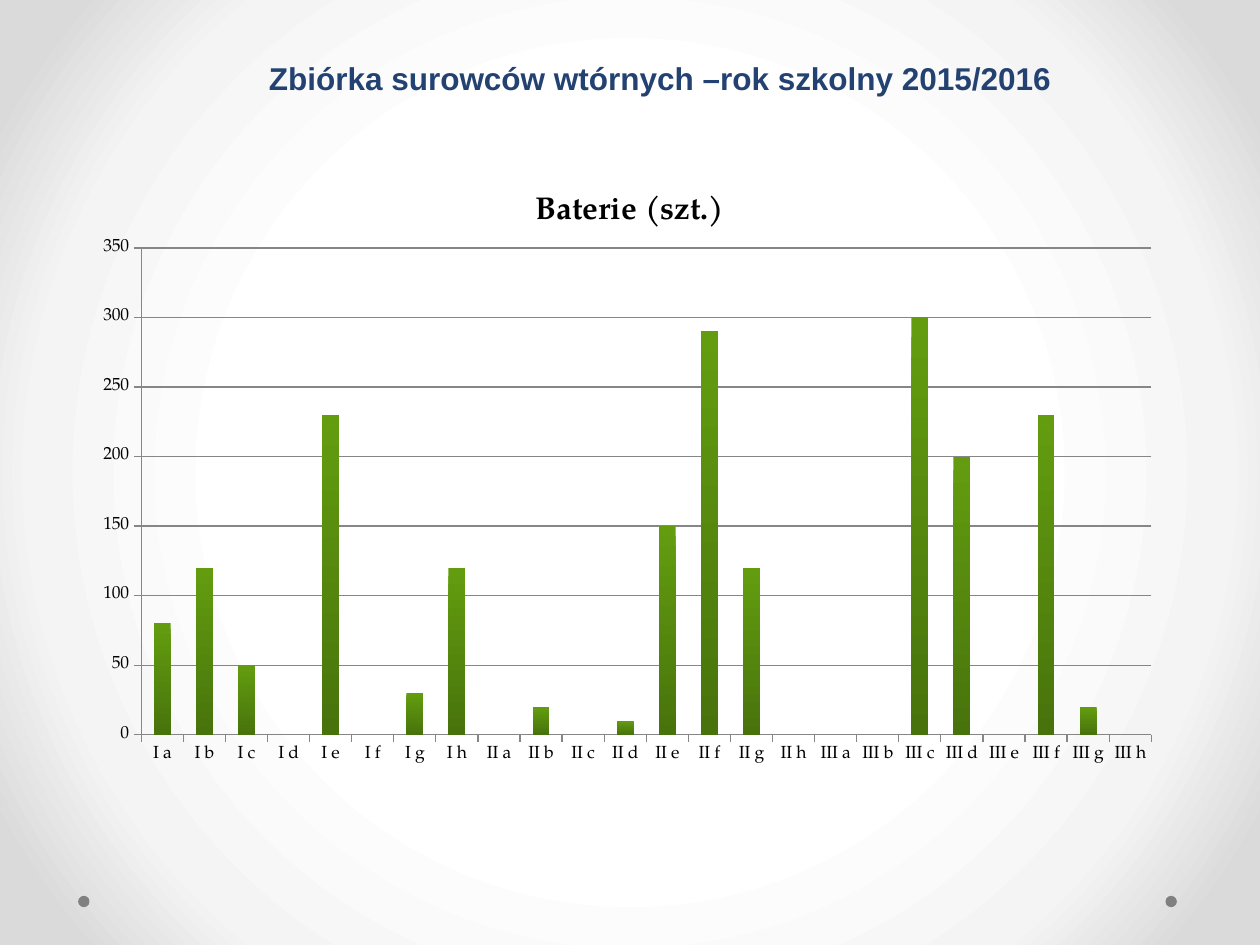
import pptx
import pptx.chart.data
import pptx.dml.color
import pptx.enum.chart
import pptx.enum.shapes
import pptx.enum.text
import pptx.oxml
import pptx.oxml.ns
import pptx.util
from pptx.util import Inches

RGBColor = pptx.dml.color.RGBColor
NAVY = RGBColor(0x23, 0x42, 0x71)
BLACK = RGBColor(0x00, 0x00, 0x00)
DOT_GRAY = RGBColor(0x80, 0x80, 0x80)
LINE_GRAY = RGBColor(0x86, 0x86, 0x86)
BAR_LIGHT = RGBColor(0x63, 0x9D, 0x0F)
BAR_DARK = RGBColor(0x48, 0x73, 0x0C)
BACKGROUND_STOPS = [
    (50, RGBColor(0xFF, 0xFF, 0xFF)),
    (76, RGBColor(0xF4, 0xF4, 0xF4)),
    (92, RGBColor(0xDA, 0xDA, 0xDA)),
]
CHART_FONT = "TeX Gyre Pagella"
SERIES_NAME = "Baterie (szt.)"
GRADES = ["I", "II", "III"]
CLASSES = "abcdefgh"
BATTERIES = [
    80, 120, 50, None, 230, None, 30, 120,
    None, 20, None, 10, 150, 290, 120, None,
    None, None, 300, 200, None, 230, 20, None,
]
PLOT_LAYOUT = {"x": 0.05, "y": 0.13, "w": 0.93, "h": 0.8}


def format_font(font, name, size, color, bold=False):
    """Set the typeface, size, colour and weight of a font."""
    font.name = name
    font.size = pptx.util.Pt(size)
    font.color.rgb = color
    font.bold = bold


def write_text(frame, text, align=None, line_spacing=None, space_after=None, **style):
    """Write one paragraph into a text frame with the given format."""
    para = frame.paragraphs[0]
    para.alignment = align
    para.line_spacing = line_spacing
    if space_after is not None:
        para.space_after = pptx.util.Pt(space_after)
    span = para.add_run()
    span.text = text
    format_font(span.font, **style)


def paint_background(page):
    """Give the page a circular gradient from white to gray."""
    stops = "".join(
        f'<a:gs pos="{position * 1000}"><a:srgbClr val="{color}"/></a:gs>'
        for position, color in BACKGROUND_STOPS
    )
    background = pptx.oxml.parse_xml(
        f'<p:bg {pptx.oxml.ns.nsdecls("p", "a")}><p:bgPr><a:gradFill rotWithShape="1">'
        f'<a:gsLst>{stops}</a:gsLst><a:path path="circle">'
        '<a:fillToRect l="50000" t="50000" r="50000" b="50000"/></a:path>'
        '</a:gradFill><a:effectLst/></p:bgPr></p:bg>'
    )
    page.element.cSld.insert(0, background)


def add_dots(page, left, top, width, height):
    """Place a gray dot at each end of the given strip."""
    for dot_left in (left, left + width - height):
        dot = page.shapes.add_shape(
            pptx.enum.shapes.MSO_SHAPE.OVAL, dot_left, top, height, height
        )
        dot.shadow.inherit = False
        dot.fill.solid()
        dot.fill.fore_color.rgb = DOT_GRAY
        dot.line.fill.background()


def add_heading(page, left, top, width, height):
    """Move the title placeholder to the box and fill it."""
    box = page.shapes.title
    box.left, box.top, box.width, box.height = left, top, width, height
    frame = box.text_frame
    frame.word_wrap = True
    frame.auto_size = pptx.enum.text.MSO_AUTO_SIZE.NONE
    frame.vertical_anchor = pptx.enum.text.MSO_ANCHOR.TOP
    write_text(
        frame, "Zbiórka surowców wtórnych –rok szkolny 2015/2016",
        align=pptx.enum.text.PP_ALIGN.CENTER, line_spacing=1.15, space_after=10,
        name="Arial", size=18, color=NAVY, bold=True,
    )


def fix_plot_area(chart):
    """Pin the inner plot area to fixed fractions of the chart."""
    plot_area = chart.element.chart.plotArea
    for automatic in plot_area.findall(pptx.oxml.ns.qn("c:layout")):
        plot_area.remove(automatic)
    sizes = "".join(f'<c:{key} val="{value}"/>' for key, value in PLOT_LAYOUT.items())
    layout = pptx.oxml.parse_xml(
        f'<c:layout {pptx.oxml.ns.nsdecls("c")}><c:manualLayout>'
        '<c:layoutTarget val="inner"/><c:xMode val="edge"/><c:yMode val="edge"/>'
        f'{sizes}</c:manualLayout></c:layout>'
    )
    plot_area.insert(0, layout)


def add_battery_chart(page, left, top, width, height):
    """Draw the column chart of batteries collected by each class."""
    data = pptx.chart.data.CategoryChartData()
    data.categories = [f"{grade} {letter}" for grade in GRADES for letter in CLASSES]
    data.add_series(SERIES_NAME, BATTERIES)
    chart = page.shapes.add_chart(
        pptx.enum.chart.XL_CHART_TYPE.COLUMN_CLUSTERED, left, top, width, height, data
    ).chart
    format_font(chart.font, CHART_FONT, 10, BLACK)
    chart.has_legend = False
    chart.has_title = True
    write_text(
        chart.chart_title.text_frame, SERIES_NAME,
        name=CHART_FONT, size=18, color=BLACK, bold=True,
    )
    chart.chart_title.include_in_layout = False
    fix_plot_area(chart)

    for axis in (chart.category_axis, chart.value_axis):
        axis.major_tick_mark = pptx.enum.chart.XL_TICK_MARK.OUTSIDE
        axis.format.line.color.rgb = LINE_GRAY
    scale = chart.value_axis
    scale.minimum_scale, scale.maximum_scale, scale.major_unit = 0, 350, 50
    scale.has_major_gridlines = True
    scale.major_gridlines.format.line.color.rgb = LINE_GRAY

    plot = chart.plots[0]
    plot.gap_width = 150
    plot.vary_by_categories = False
    fill = plot.series[0].format.fill
    fill.gradient()
    fill.gradient_angle = 270
    for stop, color in zip(fill.gradient_stops, (BAR_LIGHT, BAR_DARK)):
        stop.color.rgb = color


def main():
    """Build and save the deck."""
    deck = pptx.Presentation()
    deck.slide_width, deck.slide_height = Inches(10), Inches(7.5)
    page = deck.slides.add_slide(deck.slide_layouts[5])
    paint_background(page)
    add_dots(page, Inches(0.62), Inches(7.11), Inches(8.72), Inches(0.09))
    add_heading(page, Inches(0.83), Inches(0.37), Inches(8.82), Inches(0.89))
    add_battery_chart(page, Inches(0.69), Inches(1.34), Inches(8.62), Inches(4.83))
    deck.save("out.pptx")


if __name__ == "__main__":
    main()
